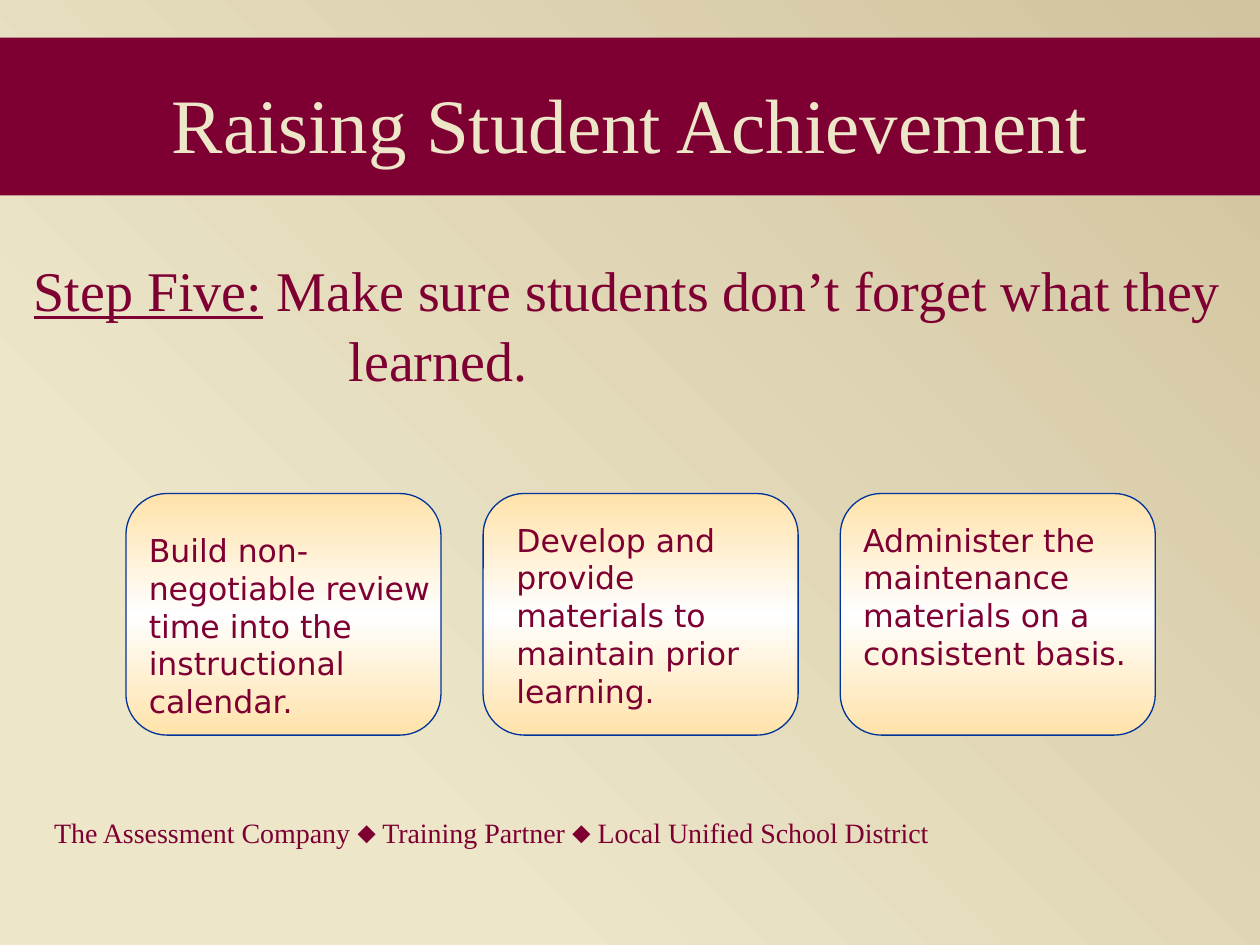
from copy import deepcopy

from pptx import Presentation
from pptx.dml.color import RGBColor
from pptx.enum.shapes import MSO_SHAPE as Shape
from pptx.enum.text import MSO_ANCHOR as Anchor, PP_ALIGN as Align
from pptx.util import Cm, Pt

# Content
TITLE = "Raising Student Achievement"
STEP = "Step Five:"
STEP_TEXT = " Make sure students don’t forget what they learned."
FOOTER = "The Assessment Company ⬥ Training Partner ⬥ Local Unified School District"
# Each card: text, then left, top, width and height of its text in cm
CARDS = [
    ("Build non-negotiable review time into the instructional calendar.",
     (2.75, 10.58, 6.55, 4.11)),
    ("Develop and provide materials to maintain prior learning.",
     (10.16, 10.37, 5.72, 4.06)),
    ("Administer the maintenance materials on a consistent basis.",
     (17.15, 10.37, 6.35, 3.3)),
]

# Style
MAROON, CREAM, TAN = "7E0032", "EDE6C9", "D1C39F"
PEACH, WHITE, BLUE = "FFE2A9", "FFFFFF", "003399"
SERIF, SANS = "Times New Roman", "DejaVu Sans"

# Card row in cm
CARD_LEFT, CARD_TOP, CARD_WIDTH, CARD_HEIGHT, CARD_STEP = 2.54, 9.95, 6.35, 4.87, 7.2


def color(value):
    return RGBColor.from_string(value)


def set_gradient(fill, stops, angle):
    """Fill with (position, colour) stops; the angle runs counterclockwise."""
    fill.gradient()
    fill.gradient_angle = angle
    stop_list = fill.gradient_stops._gsLst
    while len(stop_list) < len(stops):
        stop_list.append(deepcopy(stop_list[0]))
    for stop, (position, value) in zip(fill.gradient_stops, stops):
        stop.position = position
        stop.color.rgb = color(value)


def set_font(paragraph, name, size, value):
    font = paragraph.font
    font.name, font.size = name, Pt(size)
    font.color.rgb = color(value)


def add_text(slide, box, text, name, size):
    frame = slide.shapes.add_textbox(*map(Cm, box)).text_frame
    frame.word_wrap = True
    paragraph = frame.paragraphs[0]
    paragraph.text = text
    set_font(paragraph, name, size, MAROON)
    return paragraph


def add_shape(slide, kind, box):
    shape = slide.shapes.add_shape(kind, *map(Cm, box))
    shape.shadow.inherit = False
    return shape


presentation = Presentation()
presentation.slide_width, presentation.slide_height = Cm(25.4), Cm(19.05)
slide = presentation.slides.add_slide(presentation.slide_layouts[6])
set_gradient(slide.background.fill, [(0.24, CREAM), (1, TAN)], 45)

# Footer
add_text(slide, (0.84, 16.31, 20.75, 1.9), FOOTER, SERIF, 16)

# Title band
band = add_shape(slide, Shape.RECTANGLE, (0, 0.76, 25.4, 3.18))
band.fill.solid()
band.fill.fore_color.rgb = color(MAROON)
band.line.fill.background()
frame = band.text_frame
frame.word_wrap = True
frame.vertical_anchor = Anchor.MIDDLE
frame.margin_top = Cm(0.38)
paragraph = frame.paragraphs[0]
paragraph.text = TITLE
paragraph.alignment = Align.CENTER
set_font(paragraph, SERIF, 44, CREAM)

# Step heading with a hanging indent
paragraph = add_text(slide, (0.43, 4.95, 24.56, 3.18), STEP, SERIF, 32)
paragraph.runs[0].font.underline = True
paragraph.add_run().text = STEP_TEXT
paragraph.line_spacing = 1.05
properties = paragraph._p.get_or_add_pPr()
properties.set("marL", str(Cm(6.35)))
properties.set("indent", str(Cm(-6.35)))

# Cards
for index, (text, text_box) in enumerate(CARDS):
    left = CARD_LEFT + index * CARD_STEP
    card = add_shape(slide, Shape.ROUNDED_RECTANGLE,
                     (left, CARD_TOP, CARD_WIDTH, CARD_HEIGHT))
    card.adjustments[0] = 0.17
    set_gradient(card.fill, [(0, PEACH), (0.5, WHITE), (1, PEACH)], 270)
    card.line.color.rgb = color(BLUE)
    card.line.width = Pt(0.75)
    add_text(slide, text_box, text, SANS, 18)

presentation.save("out.pptx")
